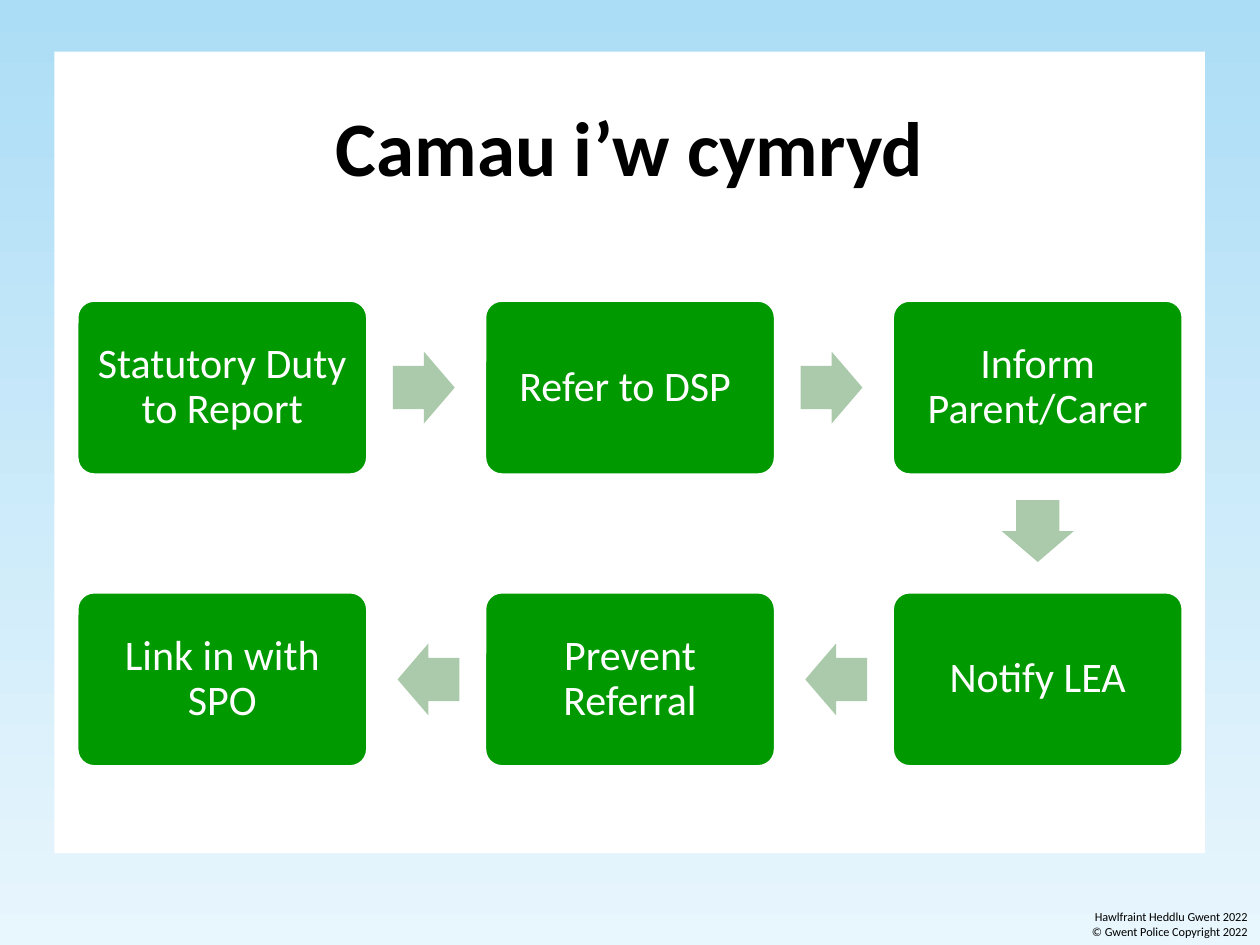
from pptx import Presentation
from pptx.dml.color import RGBColor
from pptx.enum.shapes import MSO_SHAPE as SHAPE
from pptx.enum.text import MSO_ANCHOR as ANCHOR, PP_ALIGN as ALIGN
from pptx.util import Pt

BLACK = RGBColor(0x00, 0x00, 0x00)
WHITE = RGBColor(0xFF, 0xFF, 0xFF)
GREEN = RGBColor(0x00, 0x99, 0x00)
SAGE = RGBColor(0xAB, 0xCA, 0xAB)
SKY = RGBColor(0xAC, 0xDD, 0xF6)
PALE_SKY = RGBColor(0xE8, 0xF6, 0xFD)

STEPS = [
    ("Statutory Duty to Report", 0, 0),
    ("Refer to DSP ", 1, 0),
    ("Inform Parent/Carer", 2, 0),
    ("Notify LEA", 2, 1),
    ("Prevent Referral", 1, 1),
    ("Link in with SPO", 0, 1),
]
STEP_W, STEP_H = 166.3, 100
FIRST_X, FIRST_Y = 127, 221.5
PITCH_X, PITCH_Y = 233, 166.7
ARROW_W, ARROW_H = 35.3, 41.2
ARROW_DX, ARROW_DY = 115.2, 82


class SlideBuilder:
    font = "Calibri"

    def __init__(self, slide):
        self.slide = slide

    def background(self, top, bottom):
        fill = self.slide.background.fill
        fill.gradient()
        fill.gradient_angle = 270
        for stop, color in zip(fill.gradient_stops, (top, bottom)):
            stop.color.rgb = color

    def shape(self, kind, x, y, w, h, color, adjustments=()):
        sp = self.slide.shapes.add_shape(kind, Pt(x), Pt(y), Pt(w), Pt(h))
        sp.shadow.inherit = False
        sp.fill.solid()
        sp.fill.fore_color.rgb = color
        sp.line.fill.background()
        for i, value in enumerate(adjustments):
            sp.adjustments[i] = value
        return sp

    def fill_text(self, sp, lines, size, color, align, anchor, bold=False, spacing=1.0):
        tf = sp.text_frame
        tf.word_wrap = True
        tf.vertical_anchor = anchor
        style = {"name": self.font, "size": Pt(size), "bold": bold}
        for i, line in enumerate(lines):
            p = tf.paragraphs[0] if i == 0 else tf.add_paragraph()
            p.alignment = align
            p.line_spacing = spacing
            r = p.add_run()
            r.text = line
            for key, value in style.items():
                setattr(r.font, key, value)
            r.font.color.rgb = color

    def text(self, x, y, w, h, lines, size, align, anchor, bold=False):
        sp = self.slide.shapes.add_textbox(Pt(x), Pt(y), Pt(w), Pt(h))
        self.fill_text(sp, lines, size, BLACK, align, anchor, bold)

    def step(self, label, cx, cy):
        sp = self.shape(SHAPE.ROUNDED_RECTANGLE, cx - STEP_W / 2, cy - STEP_H / 2,
                        STEP_W, STEP_H, GREEN, [0.1])
        sp.line.color.rgb = WHITE
        sp.line.width = Pt(2)
        for side in ("left", "right", "top", "bottom"):
            setattr(sp.text_frame, f"margin_{side}", Pt(7.2))
        self.fill_text(sp, [label], 24, WHITE, ALIGN.CENTER, ANCHOR.MIDDLE, spacing=0.9)

    def arrow(self, cx, cy, rotation):
        sp = self.shape(SHAPE.RIGHT_ARROW, cx - ARROW_W / 2, cy - ARROW_H / 2,
                        ARROW_W, ARROW_H, SAGE, [0.6, 0.5])
        sp.rotation = rotation


def main():
    prs = Presentation()
    prs.slide_width, prs.slide_height = Pt(720), Pt(540)
    s = SlideBuilder(prs.slides.add_slide(prs.slide_layouts[6]))

    s.background(SKY, PALE_SKY)
    s.shape(SHAPE.RECTANGLE, 31, 29.5, 657.5, 458, WHITE)
    s.text(571, 510, 149, 30,
           ["Hawlfraint Heddlu Gwent 2022", "© Gwent Police Copyright 2022"],
           7, ALIGN.RIGHT, ANCHOR.BOTTOM)
    s.text(43.2, 39.6, 633.6, 87, ["Camau i’w cymryd"], 44,
           ALIGN.CENTER, ANCHOR.MIDDLE, bold=True)

    rotations = {(1, 0): 0, (0, 1): 90, (-1, 0): 180}
    for i, (label, col, row) in enumerate(STEPS):
        cx, cy = FIRST_X + col * PITCH_X, FIRST_Y + row * PITCH_Y
        s.step(label, cx, cy)
        for _, next_col, next_row in STEPS[i + 1:i + 2]:
            dx, dy = next_col - col, next_row - row
            s.arrow(cx + dx * ARROW_DX, cy + dy * ARROW_DY, rotations[dx, dy])

    prs.save("out.pptx")


if __name__ == "__main__":
    main()
